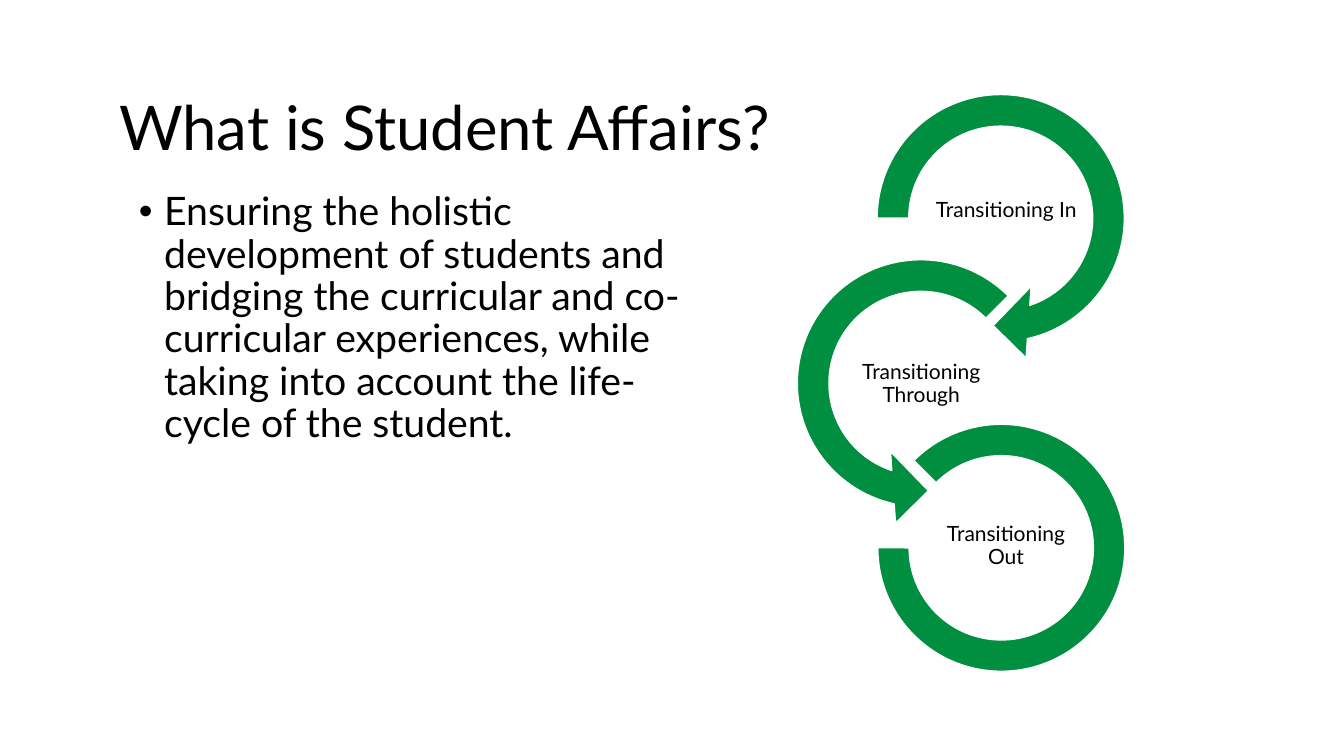
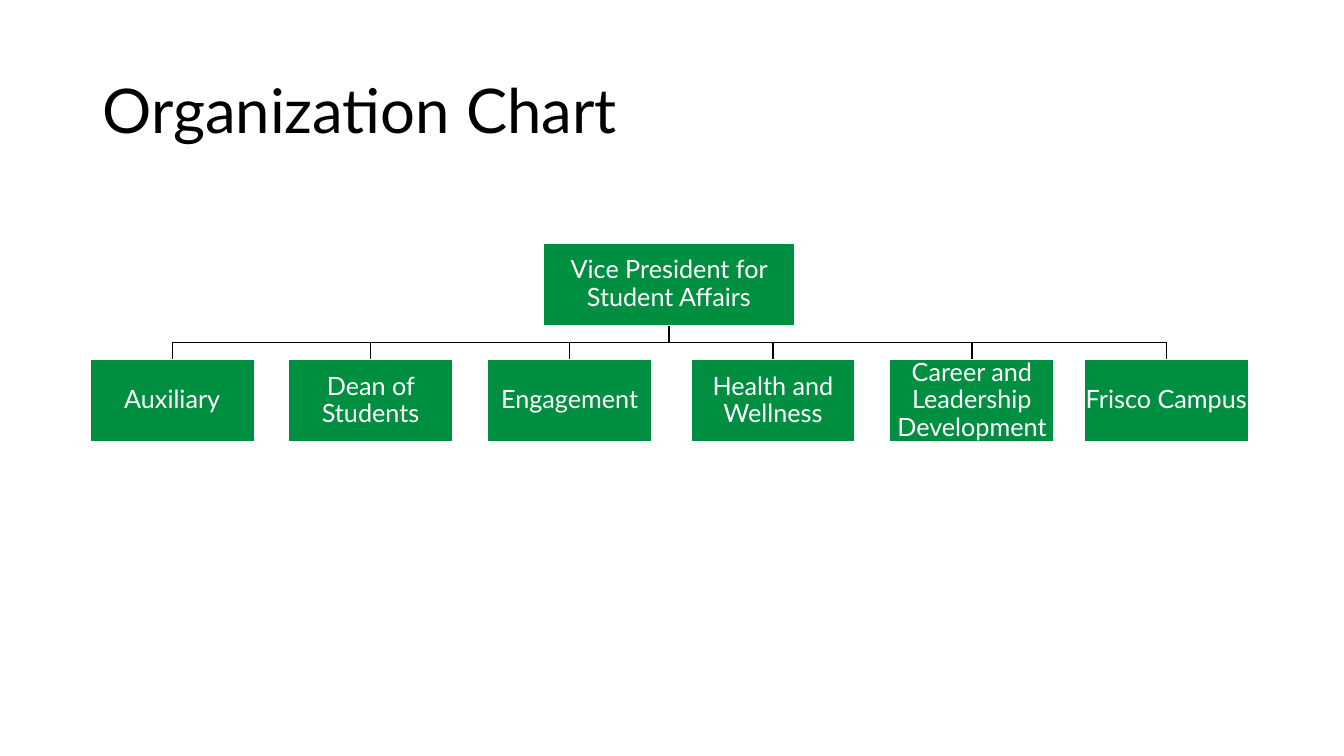
from dataclasses import dataclass

from lxml import etree
from pptx import Presentation
from pptx import util as u
from pptx.dml.color import RGBColor
from pptx.enum import shapes, text
from pptx.oxml import ns


@dataclass(frozen=True)
class Theme:
    font: str = "Lato"
    green: RGBColor = RGBColor(0x00, 0x8E, 0x40)
    black: RGBColor = RGBColor(0x00, 0x00, 0x00)
    white: RGBColor = RGBColor(0xFF, 0xFF, 0xFF)
    title_size: int = 44
    body_size: int = 28
    node_size: int = 18
    label_size: int = 15
    line_spacing: float = 0.9
    line_width: int = 1
    node_inset: float = 0.01


THEME = Theme()
WIDTH, HEIGHT = u.Inches(13.33), u.Inches(7.5)
PRESET = shapes.MSO_SHAPE

# Places are percentages of the slide: left, top, width, height.
TITLE_SIZE = (86.25, 19.33)
LABEL_SIZE = (11.85, 10.53)
ARROW_SIZE = (21.38, 38)
ARC_SIZE = (18.38, 32.67)

# Preset, place, adjustments, label, label corner
STAGES = [
    (PRESET.CIRCULAR_ARROW, (63.77, 9.85, *ARROW_SIZE),
     (0.11, 11.42, 45, 108, 0.125), "Transitioning In", (68.95, 22.58)),
    (PRESET.LEFT_CIRCULAR_ARROW, (57.83, 31.7, *ARROW_SIZE),
     (0.11, 11.42, 63, 189, 0.125), "Transitioning Through", (62.62, 45.6)),
    (PRESET.BLOCK_ARC, (65.31, 56.13, *ARC_SIZE),
     (135, 108, 0.127), "Transitioning Out", (68.93, 67)),
]

HEAD_PLACE = (40.43, 32.16, 18.68, 10.93)
REPORT_TOP, REPORT_SIZE = 47.56, (12.23, 10.93)
REPORTS = [
    ("Auxiliary", 6.7),
    ("Dean of Students", 21.46),
    ("Engagement", 36.27),
    ("Health and Wellness", 51.4),
    ("Career and Leadership Development", 66.2),
    ("Frisco Campus", 80.66),
]


def share(left, top, width, height):
    """Turn percentages of the slide into lengths."""
    return [u.Emu(round(part * side / 100)) for part, side in
            zip((left, top, width, height), (WIDTH, HEIGHT, WIDTH, HEIGHT))]


# Text
def add_bullet(para):
    props = para._p.get_or_add_pPr()
    props.set("marL", str(u.Inches(0.25)))
    props.set("indent", str(-u.Inches(0.25)))
    etree.SubElement(props, ns.qn("a:buFont"), typeface="Arial")
    etree.SubElement(props, ns.qn("a:buChar"), char="•")


def write(box, words, size, color=THEME.black, align=text.PP_ALIGN.LEFT,
          anchor=text.MSO_ANCHOR.MIDDLE, inset=None, bullet=False):
    frame = box.text_frame
    frame.word_wrap = True
    frame.vertical_anchor = anchor
    if inset is not None:
        frame.margin_left = frame.margin_right = u.Inches(inset)
        frame.margin_top = frame.margin_bottom = u.Inches(inset)
    para = frame.paragraphs[0]
    if bullet:
        add_bullet(para)
    para.alignment = align
    para.line_spacing = THEME.line_spacing
    span = para.add_run()
    span.text = words
    span.font.name = THEME.font
    span.font.size = u.Pt(size)
    span.font.color.rgb = color


def add_text(page, place, words, size, **options):
    write(page.shapes.add_textbox(*share(*place)), words, size, **options)


def add_title(page, left, top, words):
    add_text(page, (left, top, *TITLE_SIZE), words, THEME.title_size)


# Shapes and lines
def set_outline(shape, color):
    shape.shadow.inherit = False
    shape.line.color.rgb = color
    shape.line.width = u.Pt(THEME.line_width)


def add_green_shape(page, preset, place, adjustments=()):
    shape = page.shapes.add_shape(preset, *share(*place))
    set_outline(shape, THEME.white)
    shape.fill.solid()
    shape.fill.fore_color.rgb = THEME.green
    for index, value in enumerate(adjustments):
        shape.adjustments[index] = value
    return shape


def add_node(page, place, words):
    node = add_green_shape(page, PRESET.RECTANGLE, place)
    write(node, words, THEME.node_size, color=THEME.white,
          align=text.PP_ALIGN.CENTER, inset=THEME.node_inset)


def add_branch(page, parent_place, child_place):
    """Draw a bent line from below the parent to the top of the child."""
    left, top, width, height = share(*parent_place)
    start_x, start_y = left + width // 2, top + height
    left, end_y, width, _ = share(*child_place)
    end_x, level = left + width // 2, (start_y + end_y) // 2
    builder = page.shapes.build_freeform(start_x, start_y)
    builder.add_line_segments(
        [(start_x, level), (end_x, level), (end_x, end_y)], close=False)
    branch = builder.convert_to_shape()
    branch.fill.background()
    set_outline(branch, THEME.black)


# Slides
def build_overview(page):
    add_title(page, 8.12, 7.6, "What is Student Affairs?")
    add_text(page, (9.6, 24.75, 44.18, 63.47),
             "Ensuring the holistic development of students and bridging the "
             "curricular and co-curricular experiences, while taking into "
             "account the life-cycle of the student.",
             THEME.body_size, anchor=text.MSO_ANCHOR.TOP, bullet=True)
    for preset, place, adjustments, label, corner in STAGES:
        add_green_shape(page, preset, place, adjustments)
        add_text(page, (*corner, *LABEL_SIZE), label, THEME.label_size,
                 align=text.PP_ALIGN.CENTER, inset=THEME.node_inset)


def build_organization(page):
    add_title(page, 6.9, 5.33, "Organization Chart")
    reports = [(name, (left, REPORT_TOP, *REPORT_SIZE)) for name, left in REPORTS]
    # Branches lie behind the boxes
    for _, place in reports:
        add_branch(page, HEAD_PLACE, place)
    add_node(page, HEAD_PLACE, "Vice President for Student Affairs")
    for name, place in reports:
        add_node(page, place, name)


def main():
    deck = Presentation()
    deck.slide_width, deck.slide_height = WIDTH, HEIGHT
    for build in (build_overview, build_organization):
        build(deck.slides.add_slide(deck.slide_layouts[6]))
    deck.save("out.pptx")


if __name__ == "__main__":
    main()
